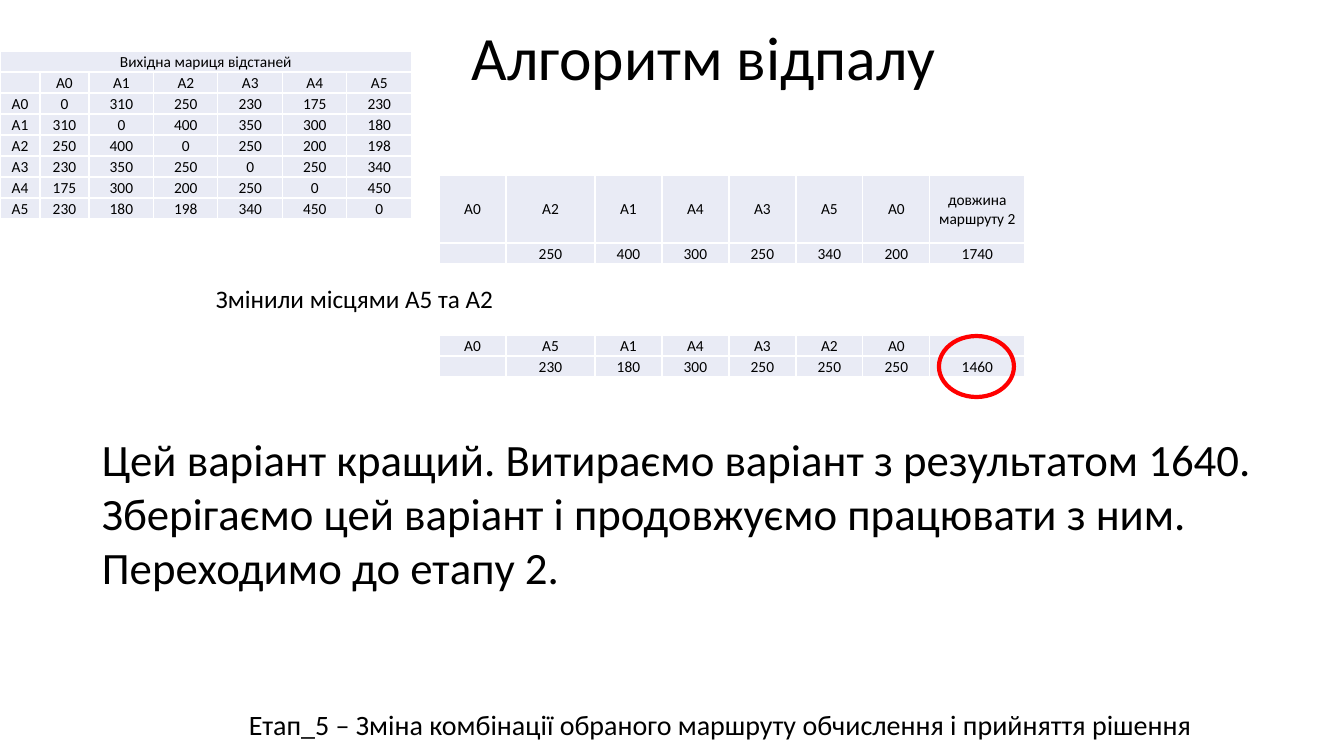
"""Build the slide about the annealing algorithm with its route tables."""

import dataclasses

import lxml.etree
import pptx
import pptx.dml.color
import pptx.enum.shapes
import pptx.enum.text
import pptx.oxml.ns
import pptx.presentation
import pptx.slide
import pptx.table
import pptx.util

EMU_PER_PX = 914400 / 100.8
FONT = "Calibri"
BLACK = pptx.dml.color.RGBColor(0x00, 0x00, 0x00)
RED = pptx.dml.color.RGBColor(0xFF, 0x00, 0x00)
WHITE = pptx.dml.color.RGBColor(0xFF, 0xFF, 0xFF)
PALE_BLUE = pptx.dml.color.RGBColor(0xE9, 0xEB, 0xF5)
CELL_POINTS = 11
ROW_HEIGHT = 21
LEFT = pptx.enum.text.PP_ALIGN.LEFT
CENTER = pptx.enum.text.PP_ALIGN.CENTER
TOP = pptx.enum.text.MSO_ANCHOR.TOP
MIDDLE = pptx.enum.text.MSO_ANCHOR.MIDDLE
ROUTE_COLUMNS = (67, 89, 67, 67, 67, 67, 67, 95)


@dataclasses.dataclass(frozen=True)
class Label:
    text: str
    left: int
    top: int
    width: int
    height: int
    points: int
    alignment: pptx.enum.text.PP_ALIGN = LEFT
    anchor: pptx.enum.text.MSO_ANCHOR = TOP
    line_spacing: float = 1.0


@dataclasses.dataclass(frozen=True)
class Grid:
    left: int
    top: int
    columns: tuple[int, ...]
    rows: tuple[int, ...]
    values: tuple[str, ...]
    heading: bool = False


LABELS = (
    Label("Алгоритм відпалу", 92, 9, 1224, 103, 44, CENTER, MIDDLE, 0.9),
    Label(
        "Етап_5 – Зміна комбінації обраного маршруту обчислення і прийняття рішення",
        178, 703, 1085, 44, 20, CENTER,
    ),
    Label("Змінили місцями A5 та A2", 206, 278, 309, 40, 18),
    Label(
        "Цей варіант кращий. Витираємо варіант з результатом 1640. "
        "Зберігаємо цей варіант і продовжуємо працювати з ним. "
        "Переходимо до етапу 2.",
        92, 427, 1179, 173, 32,
    ),
)

GRIDS = (
    Grid(
        439, 175, ROUTE_COLUMNS, (68, ROW_HEIGHT),
        ("A0|A2|A1|A4|A3|A5|A0|довжина маршруту 2", "|250|400|300|250|340|200|1740"),
    ),
    Grid(
        439, 335, ROUTE_COLUMNS, (ROW_HEIGHT,) * 2,
        ("A0|A5|A1|A4|A3|A2|A0|", "|230|180|300|250|250|250|1460"),
    ),
    Grid(
        0, 51, (40, 49, 65, 64, 65, 64, 65), (ROW_HEIGHT,) * 8,
        (
            "Вихідна мариця відстаней||||||",
            "|A0|A1|A2|A3|A4|A5",
            "A0|0|310|250|230|175|230",
            "A1|310|0|400|350|300|180",
            "A2|250|400|0|250|200|198",
            "A3|230|350|250|0|250|340",
            "A4|175|300|200|250|0|450",
            "A5|230|180|198|340|450|0",
        ),
        heading=True,
    ),
)


def px(length: int) -> pptx.util.Emu:
    """Turn pixels into EMU."""
    return pptx.util.Emu(round(length * EMU_PER_PX))


def format_runs(paragraph, points: int) -> None:
    """Set the font of every run in a paragraph."""
    for run in paragraph.runs:
        run.font.name = FONT
        run.font.size = pptx.util.Pt(points)
        run.font.color.rgb = BLACK


def add_label(slide: pptx.slide.Slide, label: Label) -> None:
    """Add one wrapped text box."""
    shape = slide.shapes.add_textbox(
        px(label.left), px(label.top), px(label.width), px(label.height)
    )
    text_frame = shape.text_frame
    text_frame.word_wrap = True
    text_frame.vertical_anchor = label.anchor
    text_frame.text = label.text
    paragraph = text_frame.paragraphs[0]
    paragraph.alignment = label.alignment
    paragraph.line_spacing = label.line_spacing
    format_runs(paragraph, label.points)


def add_borders(cell: pptx.table._Cell) -> None:
    """Give a cell thin white lines on all four sides."""
    qualified = pptx.oxml.ns.qn
    properties = cell._tc.get_or_add_tcPr()
    for position, side in enumerate(("lnL", "lnR", "lnT", "lnB")):
        line = lxml.etree.Element(qualified(f"a:{side}"), w=str(pptx.util.Pt(1)))
        fill = lxml.etree.SubElement(line, qualified("a:solidFill"))
        lxml.etree.SubElement(fill, qualified("a:srgbClr"), val=str(WHITE))
        properties.insert(position, line)


def fill_cell(cell: pptx.table._Cell, text: str) -> None:
    """Write and format one table cell."""
    cell.margin_left = cell.margin_right = cell.margin_top = px(1)
    cell.margin_bottom = 0
    cell.vertical_anchor = MIDDLE
    cell.fill.solid()
    cell.fill.fore_color.rgb = PALE_BLUE
    add_borders(cell)
    paragraph = cell.text_frame.paragraphs[0]
    paragraph.text = text
    paragraph.alignment = CENTER
    format_runs(paragraph, CELL_POINTS)
    lxml.etree.SubElement(
        paragraph._p, pptx.oxml.ns.qn("a:endParaRPr"), sz=str(CELL_POINTS * 100)
    )


def add_grid(slide: pptx.slide.Slide, grid: Grid) -> None:
    """Add one table of distances."""
    table = slide.shapes.add_table(
        len(grid.rows), len(grid.columns), px(grid.left), px(grid.top),
        px(sum(grid.columns)), px(sum(grid.rows)),
    ).table
    table.first_row = False
    table.horz_banding = False
    for column, width in zip(table.columns, grid.columns):
        column.width = px(width)
    for row, height, values in zip(table.rows, grid.rows, grid.values):
        row.height = px(height)
        for cell, text in zip(row.cells, values.split("|")):
            fill_cell(cell, text)
    if grid.heading:
        table.cell(0, 0).merge(table.cell(0, len(grid.columns) - 1))


def add_result_ring(slide: pptx.slide.Slide) -> None:
    """Circle the better route length in red."""
    shape = slide.shapes.add_shape(
        pptx.enum.shapes.MSO_SHAPE.OVAL, px(939), px(336), px(75), px(61)
    )
    shape.shadow.inherit = False
    shape.fill.background()
    shape.line.color.rgb = RED
    shape.line.width = pptx.util.Pt(3)


def main() -> None:
    """Create and save the presentation."""
    presentation = pptx.Presentation()
    presentation.slide_width = px(1344)
    presentation.slide_height = px(756)
    slide = presentation.slides.add_slide(presentation.slide_layouts[6])
    for label in LABELS:
        add_label(slide, label)
    for grid in GRIDS:
        add_grid(slide, grid)
    add_result_ring(slide)
    presentation.save("out.pptx")


if __name__ == "__main__":
    main()
